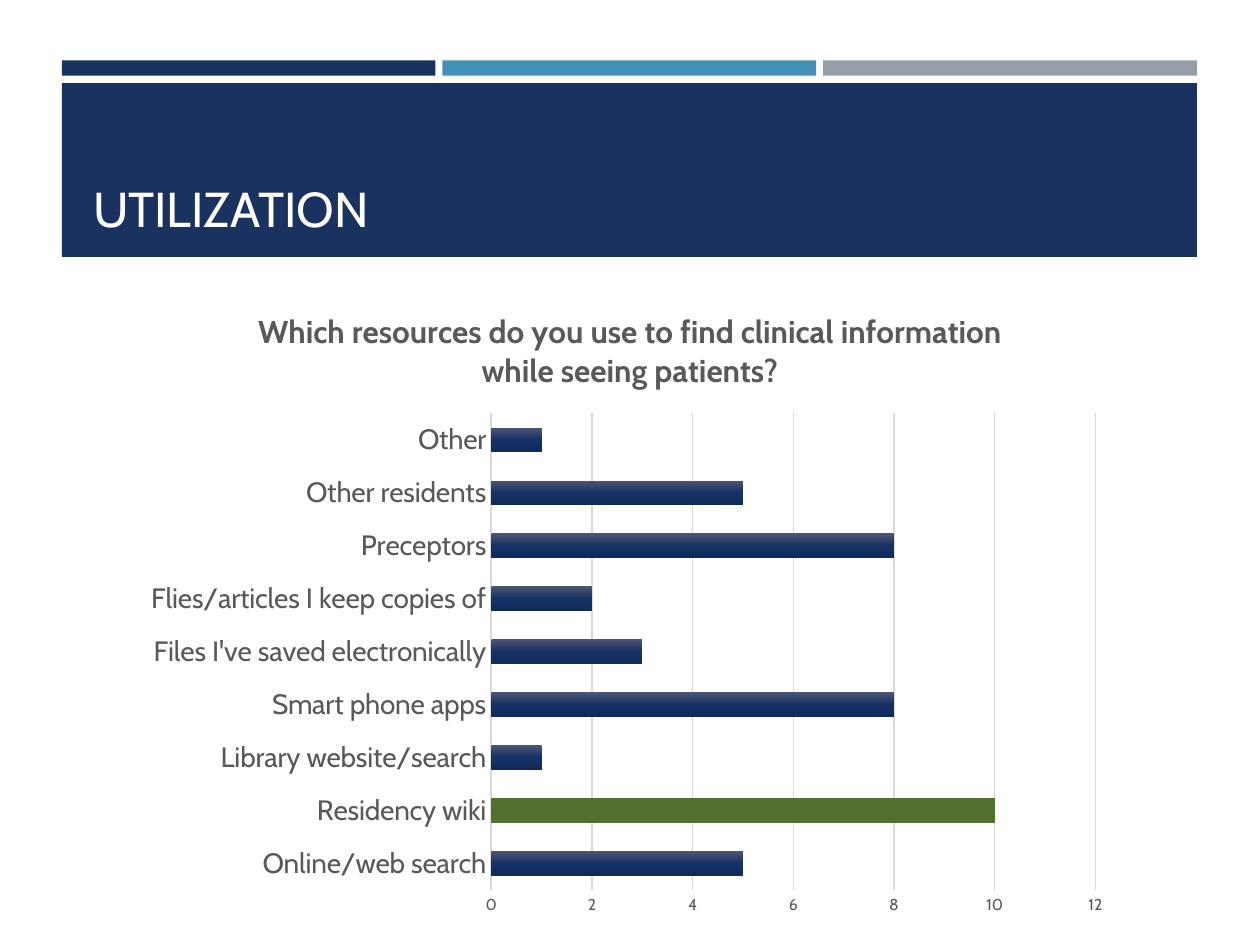
from pptx import Presentation
from pptx import util as u
from pptx.chart.data import CategoryChartData
from pptx.dml.color import RGBColor
from pptx.enum import chart as ch, shapes, text
from pptx.oxml import parse_xml
from pptx.oxml.ns import nsdecls

WIDTH, HEIGHT = 10, 7.5
FONT = "Cabin"
NAVY = RGBColor(0x1A, 0x32, 0x60)
BLUE = RGBColor(0x45, 0x90, 0xB8)
SILVER = RGBColor(0x96, 0x9F, 0xA7)
WHITE = RGBColor(0xFF, 0xFF, 0xFF)
GREEN = RGBColor(0x52, 0x71, 0x2E)
GRAY = RGBColor(0x59, 0x59, 0x59)
LIGHT_GRAY = RGBColor(0xD9, 0xD9, 0xD9)
BAR_STOPS = [(0, "4E5675"), (50, "163164"), (100, "112A5C")]

MARGIN, CONTENT_WIDTH, GAP = 0.49, 9.01, 0.055
QUESTION = ("Which resources do you use to find clinical information "
            "while seeing patients?")
RESOURCES = {
    "Online/web search": 5,
    "Residency wiki": 10,
    "Library website/search": 1,
    "Smart phone apps": 8,
    "Files I've saved electronically": 3,
    "Flies/articles I keep copies of": 2,
    "Preceptors": 8,
    "Other residents": 5,
    "Other": 1,
}
HIGHLIGHT = "Residency wiki"


def set_font(font, size, color, bold=False):
    font.name, font.size, font.bold = FONT, u.Pt(size), bold
    font.color.rgb = color


def add_block(slide, left, top, width, height, color):
    shape = slide.shapes.add_shape(
        shapes.MSO_SHAPE.RECTANGLE,
        *(u.Inches(length) for length in (left, top, width, height)))
    shape.shadow.inherit = False
    shape.fill.solid()
    shape.fill.fore_color.rgb = color
    shape.line.fill.background()


def add_header(slide, title):
    colors = (NAVY, BLUE, SILVER)
    width = (CONTENT_WIDTH - GAP * (len(colors) - 1)) / len(colors)
    for column, color in enumerate(colors):
        add_block(slide, MARGIN + column * (width + GAP), 0.48, width, 0.12, color)
    add_block(slide, MARGIN, 0.66, CONTENT_WIDTH, 1.38, NAVY)

    box = slide.shapes.add_textbox(
        u.Inches(0.64), u.Inches(0.75), u.Inches(8.74), u.Inches(1.18))
    frame = box.text_frame
    frame.word_wrap = True
    frame.vertical_anchor = text.MSO_ANCHOR.BOTTOM
    paragraph = frame.paragraphs[0]
    paragraph.text = title
    set_font(paragraph.font, 28, WHITE)


def fill_with_gradient(series, stops):
    """Give the bars a top-to-bottom gradient of three or more stops."""
    stop_xml = "".join(
        f'<a:gs pos="{share * 1000}"><a:srgbClr val="{color}"/></a:gs>'
        for share, color in stops)
    series.format.fill.background()
    properties = series.format.fill._xPr
    properties.replace(properties.find("{*}noFill"), parse_xml(
        f'<a:gradFill {nsdecls("a")} rotWithShape="1"><a:gsLst>{stop_xml}</a:gsLst>'
        '<a:lin ang="5400000" scaled="0"/></a:gradFill>'))


def place_plot(chart, x, y, w, h):
    """Fix the inner plot area, in shares of the chart's size."""
    plot_area = chart._chartSpace.chart.plotArea
    for layout in plot_area.findall("{*}layout"):
        plot_area.remove(layout)
    values = "".join(f'<c:{name} val="{value}"/>' for name, value in
                     zip("xywh", (x, y, w, h)))
    plot_area.insert(0, parse_xml(
        f'<c:layout {nsdecls("c")}><c:manualLayout><c:layoutTarget val="inner"/>'
        f'<c:xMode val="edge"/><c:yMode val="edge"/>{values}'
        '</c:manualLayout></c:layout>'))


def style_axes(chart):
    for axis, size in ((chart.category_axis, 16), (chart.value_axis, 9)):
        axis.major_tick_mark = axis.minor_tick_mark = ch.XL_TICK_MARK.NONE
        set_font(axis.tick_labels.font, size, GRAY)
    category_line = chart.category_axis.format.line
    category_line.color.rgb, category_line.width = LIGHT_GRAY, u.Pt(1)

    values = chart.value_axis
    values.minimum_scale, values.maximum_scale, values.major_unit = 0, 12, 2
    values.format.line.fill.background()
    grid_line = values.major_gridlines.format.line
    grid_line.color.rgb, grid_line.width = LIGHT_GRAY, u.Pt(0.75)


def add_resource_chart(slide):
    data = CategoryChartData()
    data.categories = list(RESOURCES)
    data.add_series("Series 1", list(RESOURCES.values()))
    chart = slide.shapes.add_chart(
        ch.XL_CHART_TYPE.BAR_CLUSTERED, u.Inches(1.07), u.Inches(2.26),
        u.Inches(7.86), u.Inches(5.11), data).chart
    chart.has_legend = False
    chart.font.name, chart.font.size = FONT, u.Pt(10)

    paragraph = chart.chart_title.text_frame.paragraphs[0]
    paragraph.text = QUESTION
    set_font(paragraph.font, 18, GRAY, bold=True)
    chart.chart_title.include_in_layout = False

    style_axes(chart)
    place_plot(chart, 0.36, 0.2, 0.61, 0.74)

    plot = chart.plots[0]
    plot.vary_by_categories = False
    plot.gap_width, plot.overlap = 115, -20
    series = plot.series[0]
    series.invert_if_negative = False
    fill_with_gradient(series, BAR_STOPS)
    highlight_fill = series.points[list(RESOURCES).index(HIGHLIGHT)].format.fill
    highlight_fill.solid()
    highlight_fill.fore_color.rgb = GREEN


def main():
    presentation = Presentation()
    presentation.slide_width = u.Inches(WIDTH)
    presentation.slide_height = u.Inches(HEIGHT)
    slide = presentation.slides.add_slide(presentation.slide_layouts[6])
    add_header(slide, "UTILIZATION")
    add_resource_chart(slide)
    presentation.save("out.pptx")


if __name__ == "__main__":
    main()
